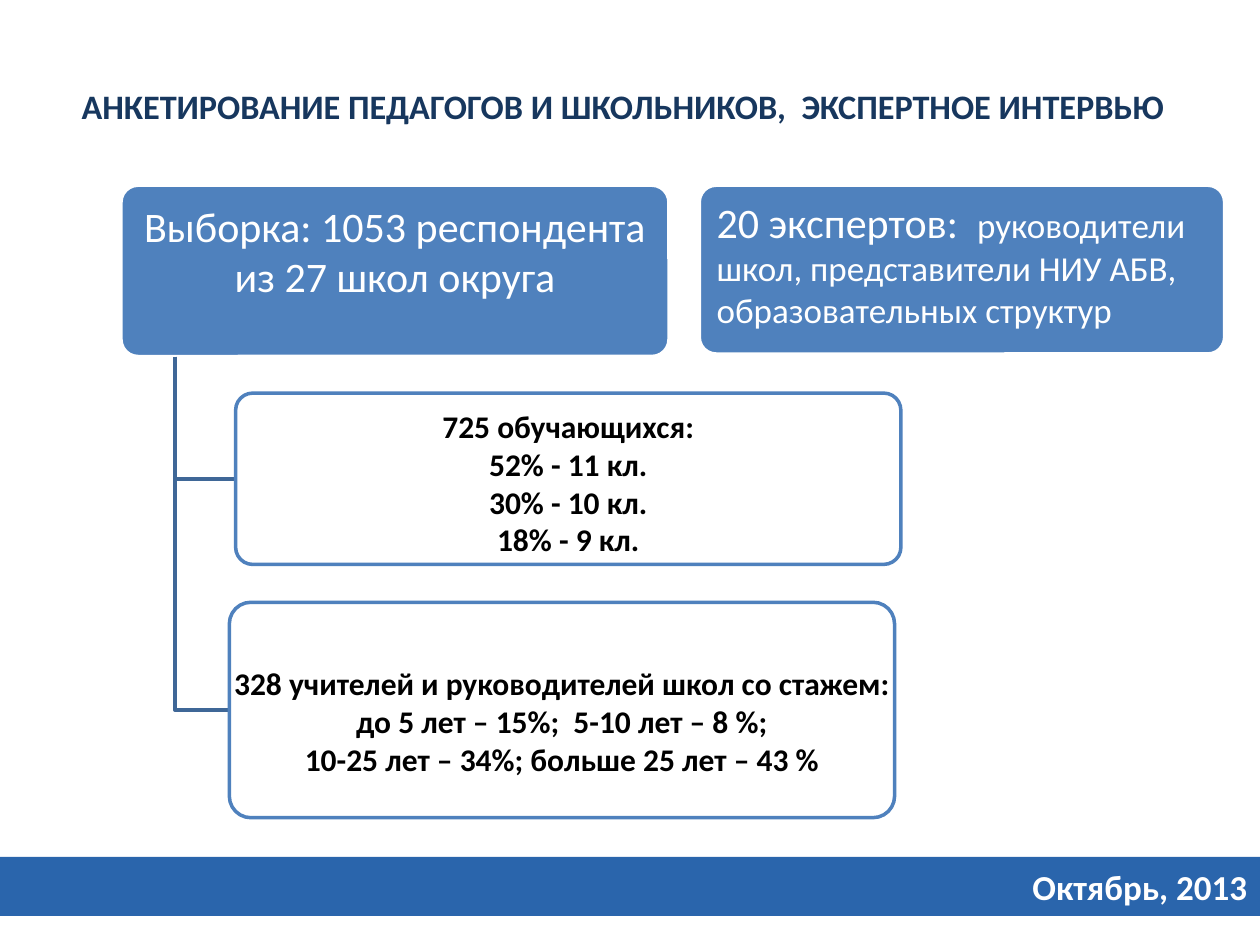
from dataclasses import dataclass

from pptx import Presentation
from pptx import util as u
from pptx.dml.color import RGBColor
from pptx.enum import shapes, text

HUES = {
    "bar": "2A65AC",
    "head": "17375E",
    "box": "4F81BD",
    "link": "3F6797",
    "white": "FFFFFF",
    "black": "000000",
}
LEFT, MID, RIGHT = text.PP_ALIGN.LEFT, text.PP_ALIGN.CENTER, text.PP_ALIGN.RIGHT
TRUNK = 1.39


@dataclass
class Run:
    words: str
    size: float
    hue: str = "white"
    bold: bool = False


@dataclass
class Box:
    area: tuple
    paras: list
    fill: str
    line: str
    pad: tuple
    align: int = MID
    anchor: int = text.MSO_ANCHOR.MIDDLE
    wrap: bool = False


def color(name: str) -> RGBColor:
    return RGBColor.from_string(HUES[name])


def setup(item, props: dict) -> None:
    for key, val in props.items():
        setattr(item, key, val)


def place(shape, area: tuple) -> None:
    sides = ("left", "top", "width", "height")
    setup(shape, {s: u.Inches(v) for s, v in zip(sides, area)})


def write(frame, paras: list, align: int, space: float = 1.0) -> None:
    for i, runs in enumerate(paras):
        para = frame.add_paragraph() if i else frame.paragraphs[0]
        setup(para, {"alignment": align, "line_spacing": space})
        for part in runs:
            run = para.add_run()
            run.text = part.words
            setup(run.font, {"name": "Calibri", "size": u.Pt(part.size), "bold": part.bold})
            run.font.color.rgb = color(part.hue)


def stroke(shape, hue: str) -> None:
    shape.shadow.inherit = False
    shape.line.color.rgb = color(hue)
    shape.line.width = u.Pt(2)


def draw_box(slide, box: Box) -> None:
    shape = slide.shapes.add_shape(
        shapes.MSO_SHAPE.ROUNDED_RECTANGLE, *map(u.Inches, box.area))
    shape.adjustments[0] = 0.1
    shape.fill.solid()
    shape.fill.fore_color.rgb = color(box.fill)
    stroke(shape, box.line)
    frame = shape.text_frame
    sides = ("margin_left", "margin_top", "margin_right", "margin_bottom")
    setup(frame, {s: u.Inches(v) for s, v in zip(sides, box.pad)})
    setup(frame, {"word_wrap": box.wrap, "vertical_anchor": box.anchor})
    write(frame, box.paras, box.align)


def draw_link(slide, top: float, box: Box) -> None:
    left, y, _, high = box.area
    mid = y + high / 2
    pen = slide.shapes.build_freeform(u.Inches(TRUNK), u.Inches(top))
    pen.add_line_segments(
        [(u.Inches(TRUNK), u.Inches(mid)), (u.Inches(left), u.Inches(mid))], close=False)
    link = pen.convert_to_shape()
    link.fill.background()
    stroke(link, HUE_LINK)


HUE_LINK = "link"


def facts(*lines: str) -> list:
    return [[Run(line, 18, "black", True)] for line in lines]


def main() -> None:
    deck = Presentation()
    setup(deck, {"slide_width": u.Inches(10), "slide_height": u.Inches(7.5)})
    slide = deck.slides.add_slide(deck.slide_layouts[5])

    bar = slide.shapes.title
    place(bar, (0, 6.8, 10, 0.47))
    bar.fill.solid()
    bar.fill.fore_color.rgb = color("bar")
    bar.text_frame.vertical_anchor = text.MSO_ANCHOR.MIDDLE
    write(bar.text_frame, [[Run("Октябрь, 2013", 20, bold=True)]], RIGHT)

    head = slide.shapes.add_textbox(*map(u.Inches, (0.55, 0.47, 9.14, 0.7))).text_frame
    setup(head, {"word_wrap": True, "vertical_anchor": text.MSO_ANCHOR.MIDDLE})
    title = "АНКЕТИРОВАНИЕ ПЕДАГОГОВ И ШКОЛЬНИКОВ,  ЭКСПЕРТНОЕ ИНТЕРВЬЮ"
    write(head, [[Run(title, 19.6, "head", True)]], LEFT, 1.1)

    sample = Box(
        (0.96, 1.47, 4.35, 1.36),
        [[Run("Выборка: 1053 респондента", 24)], [Run("из 27 школ округа", 24)]],
        "box", "white", (0.05, 0.03, 0.05, 0.35))
    pupils = Box(
        (1.87, 3.12, 5.28, 1.36),
        facts("725 обучающихся:", "52% - 11 кл.", "30% - 10 кл.", "18% - 9 кл."),
        "white", "box", (0.04, 0.06, 0.04, 0))
    staff = Box(
        (1.82, 4.78, 5.28, 1.71),
        facts("328 учителей и руководителей школ со стажем:",
              "до 5 лет – 15%;  5-10 лет – 8 %;",
              "10-25 лет – 34%; больше 25 лет – 43 %"),
        "white", "box", (0.03, 0.19, 0.03, 0.02))
    experts = Box(
        (5.55, 1.47, 4.17, 1.34),
        [[Run("20 экспертов:  ", 24),
          Run("руководители школ, представители НИУ АБВ, образовательных структур", 20)]],
        "box", "white", (0.1, 0.05, 0.1, 0.05), LEFT, text.MSO_ANCHOR.TOP, True)

    draw_box(slide, sample)
    base = sample.area[1] + sample.area[3]
    for group in (pupils, staff):
        draw_link(slide, base, group)
        draw_box(slide, group)
    draw_box(slide, experts)

    deck.save("out.pptx")


if __name__ == "__main__":
    main()
